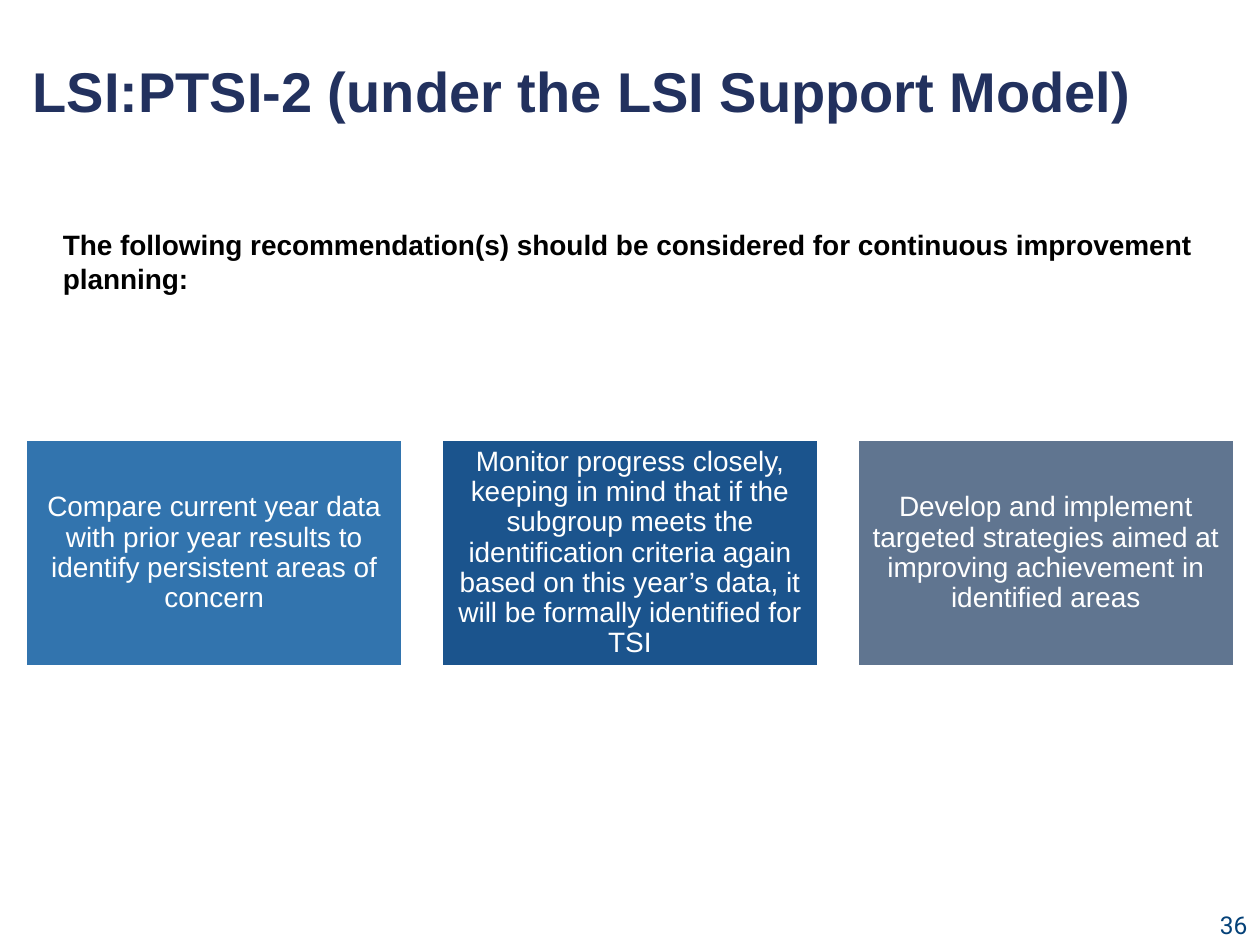
import dataclasses

import pptx
import pptx.dml.color
import pptx.enum.shapes
import pptx.enum.text
import pptx.util

Inches = pptx.util.Inches
Pt = pptx.util.Pt
RGB = pptx.dml.color.RGBColor.from_string
ALIGN = pptx.enum.text.PP_ALIGN
ANCHOR = pptx.enum.text.MSO_ANCHOR


@dataclasses.dataclass(frozen=True)
class Theme:
    """Colours, fonts and type sizes of the slide."""
    white: str = "FFFFFF"
    title: str = "22315E"
    body: str = "000000"
    number: str = "044178"
    cards: tuple = ("3274AE", "1B548D", "607590")
    font: str = "Arial"
    number_font: str = "Roboto"
    title_size: int = 32
    body_size: int = 16
    number_size: int = 14


THEME = Theme()
RECOMMENDATIONS = (
    "Compare current year data with prior year results to identify persistent areas of concern",
    "Monitor progress closely, keeping in mind that if the subgroup meets the identification "
    "criteria again based on this year’s data, it will be formally identified for TSI",
    "Develop and implement targeted strategies aimed at improving achievement in identified areas",
)


def set_text(sp, text, size, color, font=THEME.font, bold=False, align=ALIGN.LEFT,
             anchor=ANCHOR.TOP, spacing=None):
    """Write one formatted paragraph into a shape."""
    tf = sp.text_frame
    tf.word_wrap = True
    tf.vertical_anchor = anchor
    tf.text = text
    p = tf.paragraphs[0]
    p.alignment = align
    p.line_spacing = spacing
    r = p.runs[0]
    r.font.name = font
    r.font.size = Pt(size)
    r.font.bold = bold
    r.font.color.rgb = RGB(color)


def add_title(s, left, top, width, height):
    """Place the slide title."""
    sp = s.shapes.add_textbox(left, top, width, height)
    set_text(sp, "LSI:PTSI-2 (under the LSI Support Model)", THEME.title_size, THEME.title,
             bold=True, anchor=ANCHOR.MIDDLE, spacing=Pt(36))


def add_intro(s, left, top, width, height):
    """Place the sentence that introduces the recommendations."""
    sp = s.shapes.add_textbox(left, top, width, height)
    set_text(sp, "The following recommendation(s) should be considered for continuous "
             "improvement planning:", THEME.body_size, THEME.body, bold=True)


def add_recommendations(s, left, top, width, height, gap=Inches(0.3)):
    """Place the recommendation cards in equal columns."""
    count = len(RECOMMENDATIONS)
    card_width = (width - gap * (count - 1)) // count
    for i, (text, color) in enumerate(zip(RECOMMENDATIONS, THEME.cards)):
        sp = s.shapes.add_shape(pptx.enum.shapes.MSO_SHAPE.RECTANGLE,
                                left + i * (card_width + gap), top, card_width, height)
        sp.shadow.inherit = False
        sp.fill.solid()
        sp.fill.fore_color.rgb = RGB(color)
        sp.line.color.rgb = RGB(THEME.white)
        sp.line.width = Pt(2)
        tf = sp.text_frame
        tf.margin_left = tf.margin_right = tf.margin_top = tf.margin_bottom = Inches(0.07)
        set_text(sp, text, THEME.body_size, THEME.white, align=ALIGN.CENTER,
                 anchor=ANCHOR.MIDDLE, spacing=0.9)


def add_page_number(s, left, top, width, height):
    """Place the page number."""
    sp = s.shapes.add_textbox(left, top, width, height)
    set_text(sp, "36", THEME.number_size, THEME.number, font=THEME.number_font,
             align=ALIGN.RIGHT)


def main():
    """Build and save the slide."""
    prs = pptx.Presentation()
    prs.slide_width = Inches(10)
    prs.slide_height = Inches(7.5)
    s = prs.slides.add_slide(prs.slide_layouts[6])
    add_recommendations(s, Inches(0.2), Inches(3.49), Inches(9.6), Inches(1.8))
    add_page_number(s, Inches(7.67), Inches(7.17), Inches(2.33), Inches(0.33))
    add_title(s, Inches(0.16), Inches(0.36), Inches(10.25), Inches(0.75))
    add_intro(s, Inches(0.4), Inches(1.76), Inches(9.19), Inches(0.64))
    prs.save("out.pptx")


if __name__ == "__main__":
    main()
